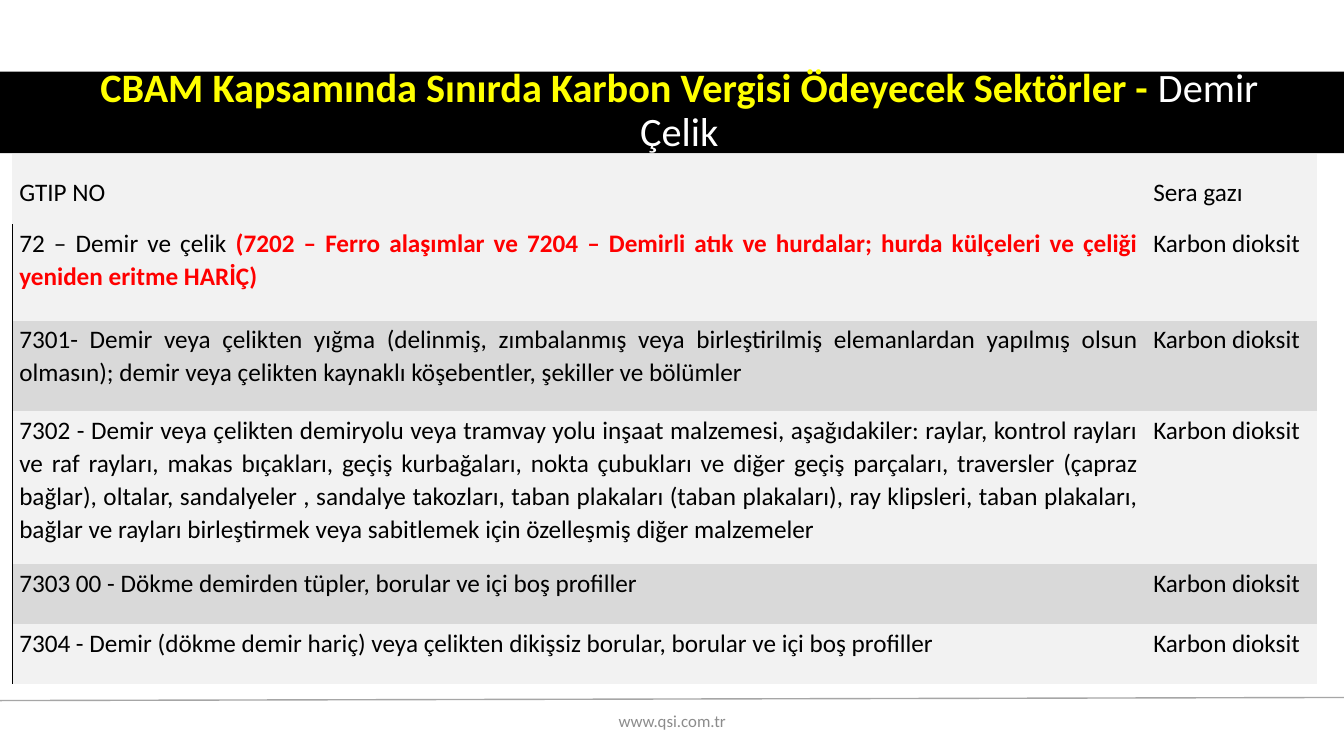
from lxml.etree import SubElement
from pptx import Presentation
from pptx.dml.color import RGBColor
from pptx.enum.shapes import MSO_CONNECTOR, MSO_SHAPE
from pptx.enum.text import MSO_ANCHOR, PP_ALIGN
from pptx.oxml import parse_xml
from pptx.oxml.ns import nsdecls, qn
from pptx.util import Pt

NO_STYLE_NO_GRID = "{2D5ABB26-0587-4C30-8999-92F81FD0307C}"
LEFT_BORDER = (
    f'<a:lnL {nsdecls("a")} w="12700"><a:solidFill><a:srgbClr val="000000"/>'
    "</a:solidFill></a:lnL>"
)


def color(value):
    return RGBColor.from_string(value)


def write_text(frame, runs, size, align, line_spacing=1.0, space_after=0):
    """Fill the first paragraph with runs given as (text, colour, bold)."""
    frame.word_wrap = True
    paragraph = frame.paragraphs[0]
    paragraph.alignment = align
    paragraph.line_spacing = line_spacing
    paragraph.space_after = Pt(space_after)
    for text, run_color, bold in runs:
        run = paragraph.add_run()
        run.text = text
        run.font.name = "Calibri"
        run.font.size = Pt(size)
        run.font.bold = bold
        run.font.color.rgb = color(run_color)


presentation = Presentation()
presentation.slide_width = Pt(960)
presentation.slide_height = Pt(540)
slide = presentation.slides.add_slide(presentation.slide_layouts[6])

# Footer rule
footer_line = slide.shapes.add_connector(
    MSO_CONNECTOR.STRAIGHT, Pt(0), Pt(500.4), Pt(960), Pt(498.2))
footer_line.line.color.rgb = color("A6A6A6")
footer_line.line.width = Pt(1)
SubElement(footer_line._element.spPr, qn("a:effectLst"))

# Title band
title_band = slide.shapes.add_shape(
    MSO_SHAPE.RECTANGLE, Pt(0), Pt(51.1), Pt(960), Pt(58.3))
title_band.shadow.inherit = False
title_band.fill.solid()
title_band.fill.fore_color.rgb = color("000000")
title_band.line.fill.background()

title = slide.shapes.add_textbox(Pt(43.9), Pt(50.4), Pt(882.7), Pt(58.3))
title.text_frame.vertical_anchor = MSO_ANCHOR.MIDDLE
title_runs = [
    ("CBAM Kapsamında Sınırda Karbon Vergisi Ödeyecek Sektörler - ", "FFFF00", True),
    ("Demir Çelik", "FFFFFF", False),
]
write_text(title.text_frame, title_runs, 28.8, PP_ALIGN.CENTER, line_spacing=0.9)

footer = slide.shapes.add_textbox(Pt(318.2), Pt(500.4), Pt(324), Pt(28.8))
footer.text_frame.vertical_anchor = MSO_ANCHOR.MIDDLE
write_text(footer.text_frame, [("www.qsi.com.tr", "8C8C8C", False)], 12,
           PP_ALIGN.CENTER, space_after=6)

# Product table: row height, product code text, excluded goods, greenhouse gas
products = [
    (50.4, "GTIP NO", "", "Sera gazı"),
    (68.8, "72 – Demir ve çelik ",
     "(7202 – Ferro alaşımlar ve 7204 – Demirli atık ve hurdalar; hurda külçeleri "
     "ve çeliği yeniden eritme HARİÇ)", "Karbon dioksit"),
    (64.8, "7301- Demir veya çelikten yığma (delinmiş, zımbalanmış veya birleştirilmiş "
     "elemanlardan yapılmış olsun olmasın); demir veya çelikten kaynaklı "
     "köşebentler, şekiller ve bölümler", "", "Karbon dioksit"),
    (109.4, "7302 - Demir veya çelikten demiryolu veya tramvay yolu inşaat malzemesi, "
     "aşağıdakiler: raylar, kontrol rayları ve raf rayları, makas bıçakları, geçiş "
     "kurbağaları, nokta çubukları ve diğer geçiş parçaları, traversler (çapraz "
     "bağlar), oltalar, sandalyeler , sandalye takozları, taban plakaları (taban "
     "plakaları), ray klipsleri, taban plakaları, bağlar ve rayları birleştirmek "
     "veya sabitlemek için özelleşmiş diğer malzemeler", "", "Karbon dioksit"),
    (42.7, "7303 00 - Dökme demirden tüpler, borular ve içi boş profiller", "",
     "Karbon dioksit"),
    (42.7, "7304 - Demir (dökme demir hariç) veya çelikten dikişsiz borular, borular "
     "ve içi boş profiller", "", "Karbon dioksit"),
]
table = slide.shapes.add_table(
    len(products), 2, Pt(8.8), Pt(109.8), Pt(931.7), Pt(378.8)).table
table._tbl.tblPr.find(qn("a:tableStyleId")).text = NO_STYLE_NO_GRID
table.first_row = False
table.horz_banding = False
table.columns[0].width = Pt(810)
table.columns[1].width = Pt(121.7)

for row, (height, product, excluded, gas) in enumerate(products):
    table.rows[row].height = Pt(height)
    product_runs = [(product, "000000", False)]
    if excluded:
        product_runs.append((excluded, "FF0000", True))
    for column, runs in enumerate([product_runs, [(gas, "000000", False)]]):
        cell = table.cell(row, column)
        cell.margin_left, cell.margin_right = Pt(5), Pt(5.8)
        cell.margin_top, cell.margin_bottom = Pt(1.4), Pt(11.5)
        cell.vertical_anchor = MSO_ANCHOR.TOP if row else MSO_ANCHOR.BOTTOM
        cell.fill.solid()
        cell.fill.fore_color.rgb = color("D9D9D9" if row in (2, 4) else "F2F2F2")
        write_text(cell.text_frame, runs, 18, PP_ALIGN.JUSTIFY,
                   line_spacing=1.07, space_after=8)
    if row:
        table.cell(row, 0)._tc.tcPr.insert(0, parse_xml(LEFT_BORDER))

presentation.save("out.pptx")
